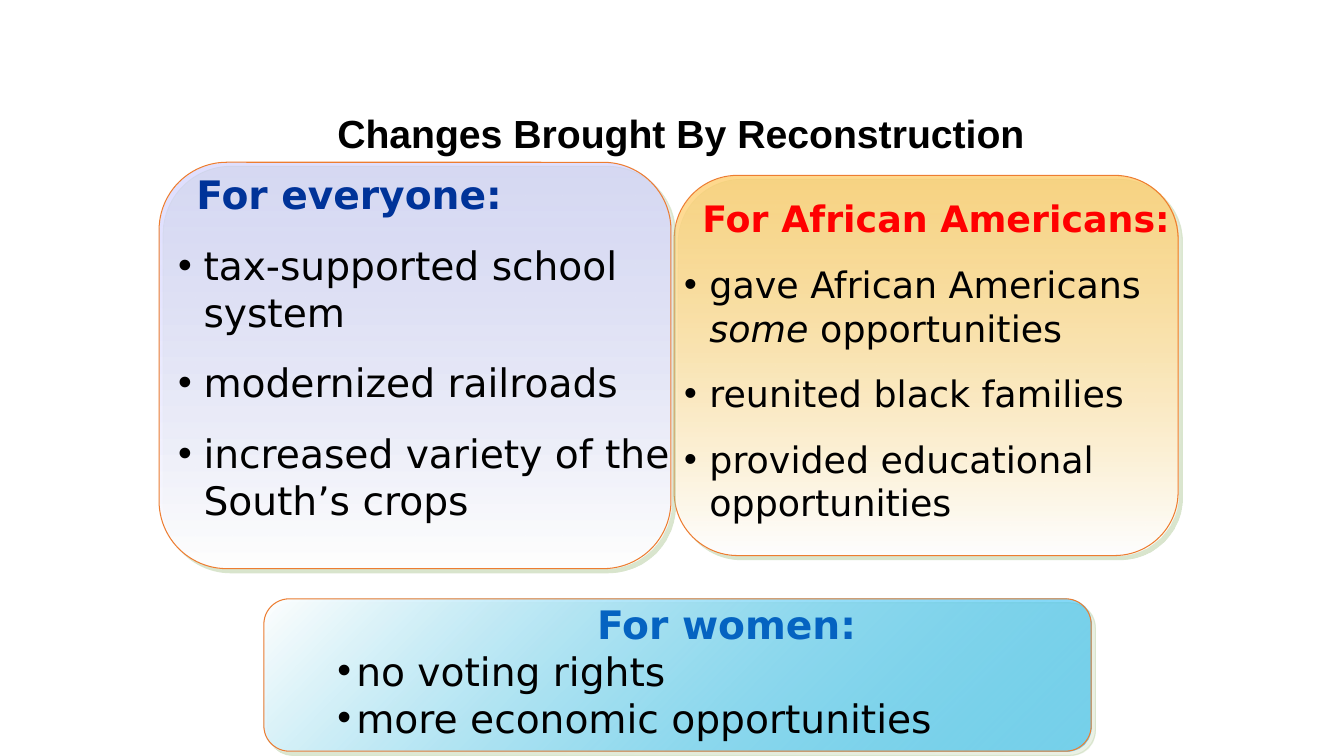
from lxml.etree import SubElement
from pptx import Presentation
from pptx.dml.color import RGBColor
from pptx.enum.shapes import MSO_SHAPE as Shape
from pptx.enum.text import MSO_AUTO_SIZE as AutoSize, PP_ALIGN as Align
from pptx.oxml.ns import qn
from pptx.util import Cm, Pt

BODY_FONT = "DejaVu Sans"
BLACK = "000000"

PANELS = [
    dict(box=(6.65, 15.09, 20.85, 3.84), color="00B0F0", opacity=50, angle=135,
         text_box=(1.6, -0.1, 20.12, 3.84), heading="For women:", heading_color="0563C1",
         size=28, hanging=0.48, heading_indent=0, gap=0, align=Align.CENTER,
         items=["no voting rights", "more economic opportunities"]),
    dict(box=(16.99, 4.42, 12.7, 9.58), color="FFCC66", opacity=75, angle=270,
         text_box=(0, 0.41, 13.77, 8.92), heading="For African Americans:",
         heading_color="FF0000", size=26, hanging=0.64, heading_indent=0.46, gap=0.6,
         align=Align.LEFT,
         items=["gave African Americans *some* opportunities", "reunited black families",
                "provided educational opportunities"]),
    dict(box=(4.01, 4.09, 12.9, 10.24), color="CDCDFF", opacity=62, angle=270,
         text_box=(0.23, 0.08, 15.16, 9.6), heading="For everyone:",
         heading_color="003399", size=28, hanging=0.64, heading_indent=0.46, gap=0.6,
         align=Align.LEFT,
         items=["tax-supported school system", "modernized railroads",
                "increased variety of the South’s crops"]),
]


def rgb(code):
    """Return the colour for a hex string."""
    return RGBColor.from_string(code)


def add_child(parent, tag, **attributes):
    """Append a drawing element with its attributes."""
    return SubElement(parent, qn(tag), {key: str(value) for key, value in attributes.items()})


def add_run(paragraph, text, color, **formats):
    """Add a run and apply its font values."""
    run = paragraph.add_run()
    run.text = text
    run.font.color.rgb = rgb(color)
    for name, value in formats.items():
        setattr(run.font, name, value)


def add_text_frame(slide, box):
    """Place a wrapping text box and return its frame."""
    frame = slide.shapes.add_textbox(*map(Cm, box)).text_frame
    frame.word_wrap = True
    frame.auto_size = AutoSize.SHAPE_TO_FIT_TEXT
    return frame


def add_bullet(paragraph, hanging):
    """Give the paragraph a hanging bullet."""
    properties = paragraph._p.get_or_add_pPr()
    properties.set("marL", str(Cm(hanging)))
    properties.set("indent", str(-Cm(hanging)))
    add_child(properties, "a:buFont", typeface="Arial")
    add_child(properties, "a:buChar", char="•")


def add_card(slide, box, panel):
    """Draw the rounded gradient card with its shadow."""
    shape = slide.shapes.add_shape(Shape.ROUNDED_RECTANGLE, *map(Cm, box))
    shape.fill.gradient()
    shape.fill.gradient_angle = panel["angle"]
    stops = shape.fill.gradient_stops
    for stop, color, position in zip(stops, (panel["color"], "FFFFFF"), (0, 1)):
        stop.color.rgb = rgb(color)
        stop.position = position
    first_color = next(shape._element.spPr.iter(qn("a:srgbClr")))
    add_child(first_color, "a:alpha", val=panel["opacity"] * 1000)
    shape.line.color.rgb = rgb("ED7D31")
    shape.line.width = Pt(0.75)
    shape.shadow.inherit = False
    effects = shape._element.spPr.find(qn("a:effectLst"))
    shadow = add_child(effects, "a:outerShdw", dist=Pt(4.2), dir=45 * 60000,
                       algn="ctr", rotWithShape=0)
    shadow_color = add_child(shadow, "a:srgbClr", val="ADC793")
    add_child(shadow_color, "a:alpha", val=46000)


def add_panel_text(slide, box, panel):
    """Write the heading and bullets relative to the card."""
    left, top, width, height = panel["text_box"]
    frame = add_text_frame(slide, (box[0] + left, box[1] + top, width, height))
    formats = dict(name=BODY_FONT, size=Pt(panel["size"]))
    heading = frame.paragraphs[0]
    heading.alignment = panel["align"]
    heading._p.get_or_add_pPr().set("marL", str(Cm(panel["heading_indent"])))
    add_run(heading, panel["heading"], panel["heading_color"], bold=True, **formats)
    for item in panel["items"]:
        paragraph = frame.add_paragraph()
        add_bullet(paragraph, panel["hanging"])
        for index, part in enumerate(item.split("*")):
            add_run(paragraph, part, BLACK, italic=index % 2 == 1, **formats)
    for paragraph in frame.paragraphs:
        paragraph.space_after = Pt(panel["gap"] * panel["size"])


def add_title(slide, box):
    """Write the slide title."""
    paragraph = add_text_frame(slide, box).paragraphs[0]
    add_run(paragraph, "Changes Brought By Reconstruction", BLACK,
            name="Arial", size=Pt(28), bold=True)


def main():
    """Build and save the slide."""
    presentation = Presentation()
    presentation.slide_width, presentation.slide_height = Cm(33.87), Cm(19.05)
    slide = presentation.slides.add_slide(presentation.slide_layouts[6])
    for panel in PANELS:
        add_card(slide, panel["box"], panel)
    for panel in PANELS:
        add_panel_text(slide, panel["box"], panel)
    add_title(slide, (8.25, 2.62, 17.88, 1.45))
    presentation.save("out.pptx")


if __name__ == "__main__":
    main()
